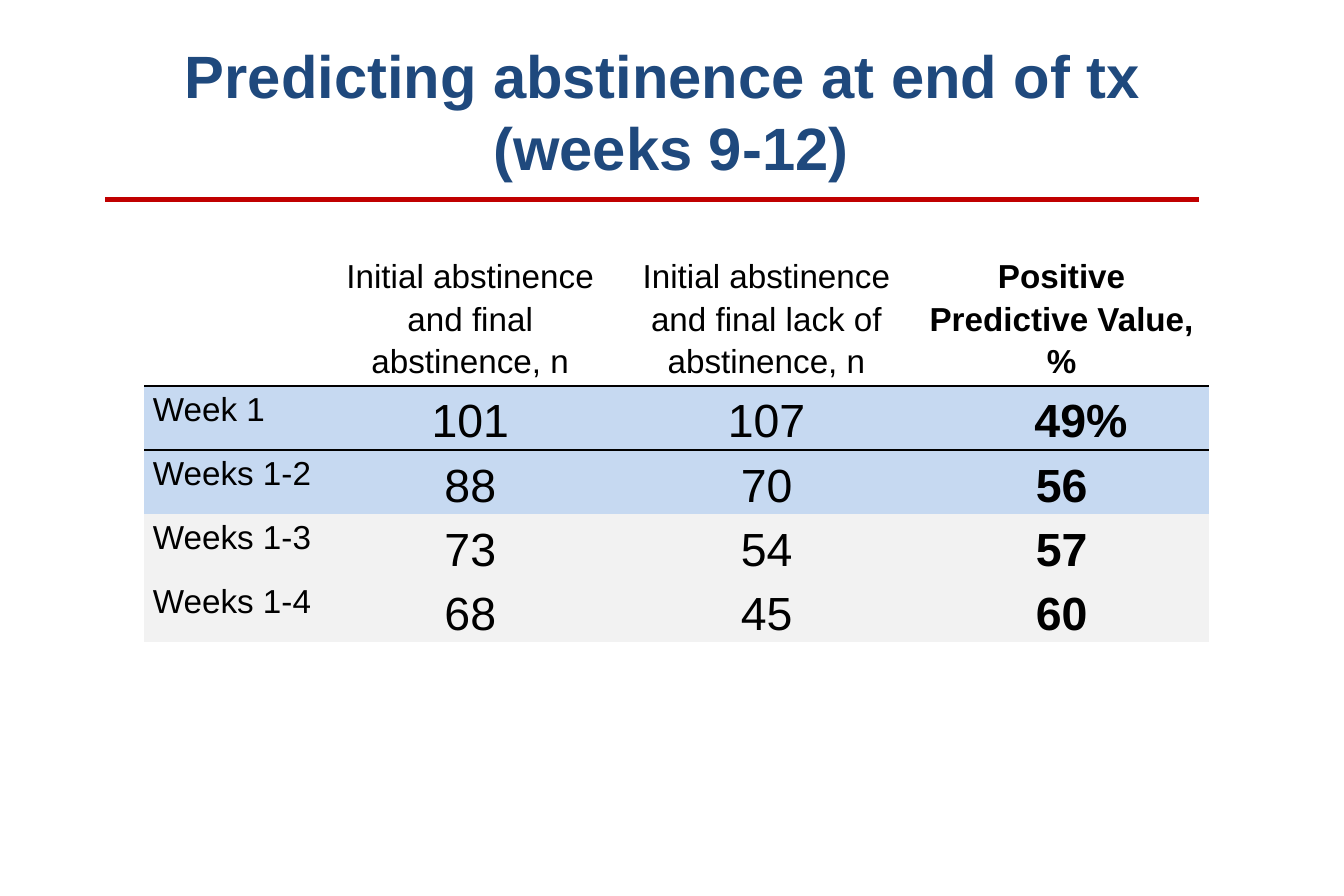
"""Build the slide on predicting abstinence at the end of treatment."""
import dataclasses

import lxml.etree
import pptx
import pptx.dml.color
import pptx.enum.shapes
import pptx.enum.text
import pptx.oxml
import pptx.oxml.ns
import pptx.util

Cm = pptx.util.Cm
Pt = pptx.util.Pt
Align = pptx.enum.text.PP_ALIGN
Anchor = pptx.enum.text.MSO_ANCHOR


@dataclasses.dataclass(frozen=True)
class Theme:
    font: str = "Arial"
    navy: str = "1F497D"
    red: str = "C00000"
    black: str = "000000"
    blue: str = "C6D9F1"
    gray: str = "F2F2F2"
    title: int = 36
    value: int = 28
    label: int = 20


theme = Theme()


def color(code):
    return pptx.dml.color.RGBColor.from_string(code)


def add_run(para, text, size, code, bold):
    run = para.add_run()
    run.text = text
    run.font.name = theme.font
    run.font.size = Pt(size)
    run.font.bold = bold
    run.font.color.rgb = color(code)


deck = pptx.Presentation()
deck.slide_width = Cm(28.58)
deck.slide_height = Cm(19.05)
slide = deck.slides.add_slide(deck.slide_layouts[6])

title = slide.shapes.add_textbox(Cm(1.42), Cm(0.76), Cm(25.7), Cm(3.18))
frame = title.text_frame
frame.word_wrap = True
frame.vertical_anchor = Anchor.MIDDLE
para = frame.paragraphs[0]
para.alignment = Align.CENTER
add_run(para, "Predicting abstinence at end of tx ", theme.title, theme.navy, True)
para.add_line_break()
add_run(para, "(weeks 9-12)", theme.title, theme.navy, True)

rows = [
    ("", "Initial abstinence and final abstinence, n",
     "Initial abstinence and final lack of abstinence, n",
     "Positive Predictive Value, %"),
    ("Week 1", "101", "107", "49%"),
    ("Weeks 1-2", "88", "70", "56"),
    ("Weeks 1-3", "73", "54", "57"),
    ("Weeks 1-4", "68", "45", "60"),
]
fills = [None, theme.blue, theme.blue, theme.gray, theme.gray]
widths = [3.78, 6.3, 6.3, 6.25]
heights = [2.7, 1.26, 1.26, 1.32, 1.32]

holder = slide.shapes.add_table(
    len(rows), len(widths), Cm(3.07), Cm(5.28), Cm(sum(widths)), Cm(sum(heights)))
table = holder.table
table.first_row = False
table.horz_banding = False
style = table._tbl.tblPr.find(pptx.oxml.ns.qn("a:tableStyleId"))
style.text = "{2D5ABB26-0587-4C30-8999-92F81FD0307C}"
for col, width in zip(table.columns, widths):
    col.width = Cm(width)
for row, height in zip(table.rows, heights):
    row.height = Cm(height)

edges = {0: "lnB", 1: "lnT"}
for r, texts in enumerate(rows):
    for c, text in enumerate(texts):
        cell = table.cell(r, c)
        cell.margin_left = cell.margin_right = Cm(0.18)
        cell.margin_top = cell.margin_bottom = 0
        cell.vertical_anchor = Anchor.MIDDLE if c else Anchor.TOP
        if fills[r]:
            cell.fill.solid()
            cell.fill.fore_color.rgb = color(fills[r])
        else:
            cell.fill.background()
        para = cell.text_frame.paragraphs[0]
        para.alignment = Align.CENTER if c else Align.LEFT
        para.line_spacing = 1.15
        if text:
            size = theme.value if r and c else theme.label
            add_run(para, text, size, theme.black, c == 3)
        if r in edges:
            edge = pptx.oxml.parse_xml(
                f'<a:{edges[r]} {pptx.oxml.ns.nsdecls("a")} w="{Pt(1)}"><a:solidFill>'
                f'<a:srgbClr val="{theme.black}"/></a:solidFill></a:{edges[r]}>')
            cell._tc.get_or_add_tcPr().insert(0, edge)
table.cell(1, 3).margin_left = Cm(1)

rule = slide.shapes.add_connector(
    pptx.enum.shapes.MSO_CONNECTOR.STRAIGHT, Cm(2.24), Cm(4.24), Cm(25.5), Cm(4.24))
rule.line.color.rgb = color(theme.red)
rule.line.width = Pt(3)
lxml.etree.SubElement(rule._element.spPr, pptx.oxml.ns.qn("a:effectLst"))

deck.save("out.pptx")
